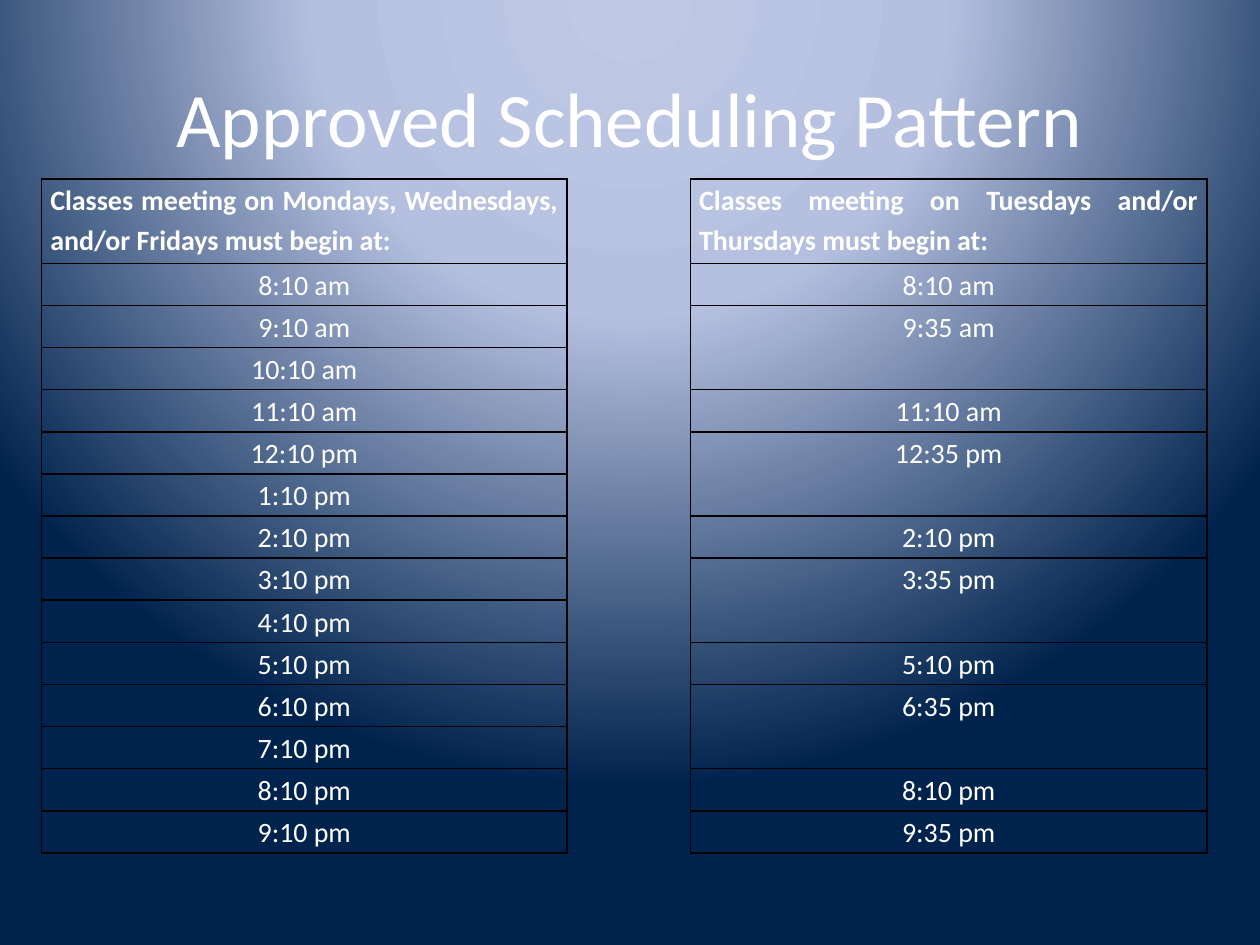
"""Build a slide with the approved class starting times."""
import lxml.etree
import pptx
import pptx.dml.color
import pptx.enum.text
import pptx.oxml
import pptx.oxml.ns
import pptx.util

Inches, Pt = pptx.util.Inches, pptx.util.Pt
ALIGN = pptx.enum.text.PP_ALIGN
FONT, WHITE, BLACK = "Calibri", "FFFFFF", "000000"

TITLE = "Approved Scheduling Pattern"
HEADERS = (
    "Classes meeting on Mondays, Wednesdays, and/or Fridays must begin at:",
    "Classes meeting on Tuesdays and/or Thursdays must begin at:",
)
MONDAY_TIMES = [
    "8:10 am", "9:10 am", "10:10 am", "11:10 am", "12:10 pm", "1:10 pm", "2:10 pm",
    "3:10 pm", "4:10 pm", "5:10 pm", "6:10 pm", "7:10 pm", "8:10 pm", "9:10 pm",
]
TUESDAY_TIMES = [
    ("8:10 am", 1), ("9:35 am", 2), ("11:10 am", 1), ("12:35 pm", 2), ("2:10 pm", 1),
    ("3:35 pm", 2), ("5:10 pm", 1), ("6:35 pm", 2), ("8:10 pm", 1), ("9:35 pm", 1),
]
GRADIENT_STOPS = [(0, "BFC9E5"), (40, "B5C0E0"), (100, "00234D")]
TABLE_LEFT, TABLE_TOP, TABLE_HEIGHT, HEADER_HEIGHT = 0.33, 1.42, 5.35, 0.67
COLUMN_WIDTHS = (4.17, 0.98, 4.1)
LEFT_COLUMN, GAP_COLUMN, RIGHT_COLUMN = range(3)


def color(hex_string):
    return pptx.dml.color.RGBColor.from_string(hex_string)


def set_background(slide):
    stops = "".join(
        f'<a:gs pos="{position * 1000}"><a:srgbClr val="{value}"/></a:gs>'
        for position, value in GRADIENT_STOPS
    )
    background = pptx.oxml.parse_xml(
        f'<p:bg {pptx.oxml.ns.nsdecls("p", "a")}><p:bgPr><a:gradFill rotWithShape="1">'
        f'<a:gsLst>{stops}</a:gsLst><a:path path="circle">'
        '<a:fillToRect l="50000" t="-80000" r="50000" b="180000"/></a:path>'
        "</a:gradFill><a:effectLst/></p:bgPr></p:bg>"
    )
    slide.element.cSld.insert(0, background)


def format_text(text_frame, size, alignment, bold=False):
    paragraph = text_frame.paragraphs[0]
    paragraph.alignment = alignment
    for run in paragraph.runs:
        run.font.name, run.font.size, run.font.bold = FONT, Pt(size), bold
        run.font.color.rgb = color(WHITE)


def add_title(slide):
    box = slide.shapes.add_textbox(Inches(0.5), Inches(0.3), Inches(9), Inches(1.25))
    frame = box.text_frame
    frame.word_wrap = True
    frame.vertical_anchor = pptx.enum.text.MSO_ANCHOR.MIDDLE
    frame.text = TITLE
    format_text(frame, 44, ALIGN.CENTER)


def style_cell(cell, bordered_sides):
    cell.fill.background()
    cell.margin_left = cell.margin_right = Inches(0.07)
    cell.margin_top = cell.margin_bottom = 0
    properties = cell._tc.get_or_add_tcPr()
    for index, side in enumerate("LRTB"):
        line = lxml.etree.Element(pptx.oxml.ns.qn(f"a:ln{side}"), w=str(Pt(1)))
        if side in bordered_sides:
            fill = lxml.etree.SubElement(line, pptx.oxml.ns.qn("a:solidFill"))
            lxml.etree.SubElement(fill, pptx.oxml.ns.qn("a:srgbClr"), val=BLACK)
        else:
            lxml.etree.SubElement(line, pptx.oxml.ns.qn("a:noFill"))
        properties.insert(index, line)


def write_cell(cell, text, space_after, header=False):
    cell.text_frame.text = text
    format_text(cell.text_frame, 16, ALIGN.JUSTIFY if header else ALIGN.CENTER, header)
    paragraph = cell.text_frame.paragraphs[0]
    paragraph.line_spacing = 1.15
    paragraph.space_after = Pt(space_after)


def add_schedule(slide):
    row_count = len(MONDAY_TIMES) + 1
    table = slide.shapes.add_table(
        row_count, len(COLUMN_WIDTHS), Inches(TABLE_LEFT), Inches(TABLE_TOP),
        Inches(sum(COLUMN_WIDTHS)), Inches(TABLE_HEIGHT),
    ).table
    table.first_row = table.horz_banding = False
    for column, width in zip(table.columns, COLUMN_WIDTHS):
        column.width = Inches(width)
    for row in table.rows:
        row.height = Inches((TABLE_HEIGHT - HEADER_HEIGHT) / len(MONDAY_TIMES))
    table.rows[0].height = Inches(HEADER_HEIGHT)

    for row in range(row_count):
        for column in range(len(COLUMN_WIDTHS)):
            style_cell(table.cell(row, column), "LR" if column == GAP_COLUMN else "LRTB")

    for column, header in zip((LEFT_COLUMN, RIGHT_COLUMN), HEADERS):
        write_cell(table.cell(0, column), header, 6, header=True)
    for row, time in enumerate(MONDAY_TIMES, 1):
        write_cell(table.cell(row, LEFT_COLUMN), time, 0)
    row = 1
    for time, span in TUESDAY_TIMES:
        cell = table.cell(row, RIGHT_COLUMN)
        write_cell(cell, time, 6)
        if span > 1:
            cell.merge(table.cell(row + span - 1, RIGHT_COLUMN))
        row += span


def main():
    presentation = pptx.Presentation()
    presentation.slide_width, presentation.slide_height = Inches(10), Inches(7.5)
    slide = presentation.slides.add_slide(presentation.slide_layouts[6])
    set_background(slide)
    add_title(slide)
    add_schedule(slide)
    presentation.save("out.pptx")


if __name__ == "__main__":
    main()
